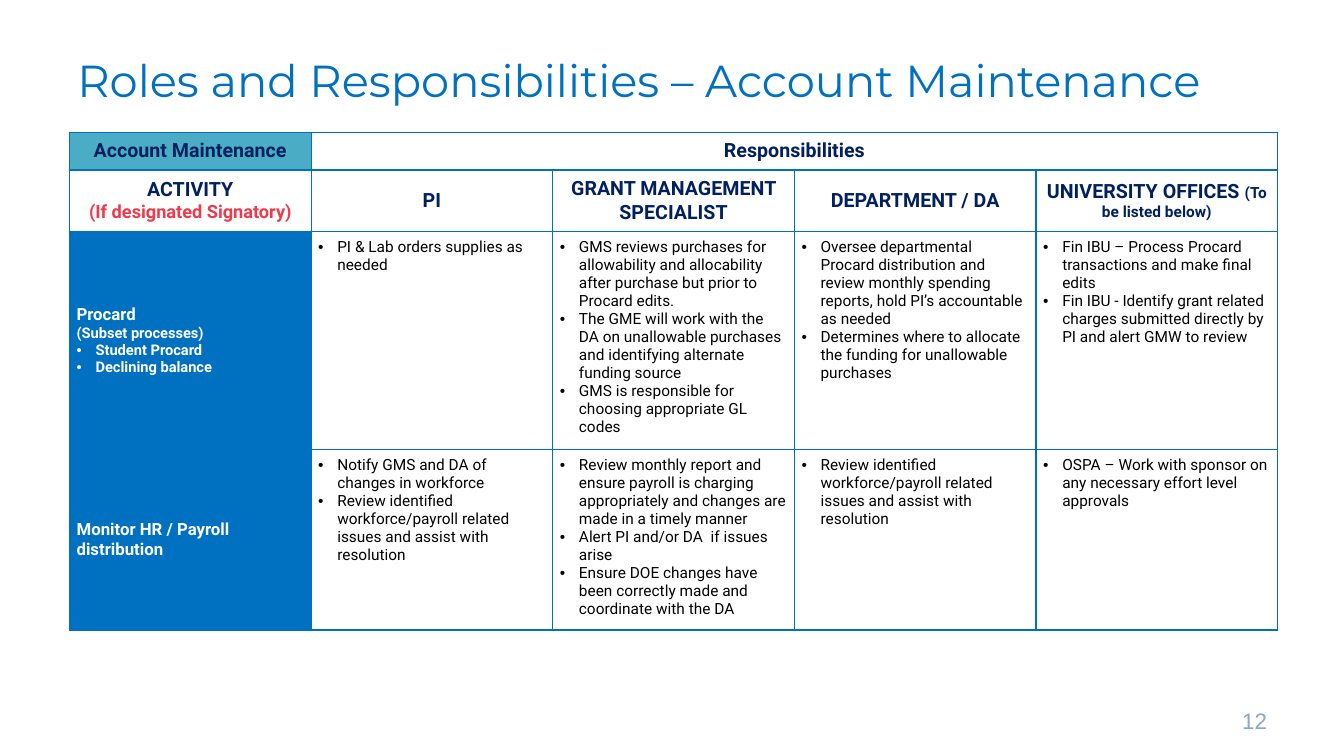
"""Build the slide on roles and responsibilities in account maintenance."""
from dataclasses import dataclass

from lxml.etree import SubElement
from pptx import Presentation
from pptx.dml.color import RGBColor as RGB
from pptx.enum.text import MSO_ANCHOR as Anchor, PP_ALIGN as Align
from pptx.oxml import parse_xml
from pptx.oxml.ns import nsdecls, qn
from pptx.util import Cm, Pt


@dataclass(frozen=True)
class Theme:
    blue: str = "0070C0"
    navy: str = "002060"
    teal: str = "4BACC6"
    red: str = "EF3A4C"
    pale: str = "8CA4D2"
    white: str = "FFFFFF"
    black: str = "000000"
    title_size: float = 32
    number_size: float = 16
    heading_size: float = 14
    signatory_size: float = 13
    activity_size: float = 12
    duty_size: float = 11
    subset_size: float = 10.5


theme = Theme()


def add_text(frame, text, size, color, font="Roboto", bold=False,
             align=Align.LEFT, bullet=False, line=None, same_line=False):
    paragraph = frame.paragraphs[-1]
    if paragraph.runs and not same_line:
        paragraph = frame.add_paragraph()
    paragraph.alignment = align
    if line:
        paragraph.line_spacing = Pt(line)
    if bullet:
        properties = paragraph._p.get_or_add_pPr()
        properties.set("marL", str(Cm(0.48)))
        properties.set("indent", str(-Cm(0.48)))
        SubElement(properties, qn("a:buFont")).set("typeface", "Arial")
        SubElement(properties, qn("a:buChar")).set("char", "•")
    run = paragraph.add_run()
    run.text = text
    run.font.name, run.font.size, run.font.bold = font, Pt(size), bold
    run.font.color.rgb = RGB.from_string(color)


def style_cell(cell, fill=None, anchor=Anchor.MIDDLE, margin=0.18):
    cell.vertical_anchor = anchor
    cell.margin_left = cell.margin_right = Cm(margin)
    cell.margin_top = cell.margin_bottom = Cm(margin)
    if fill:
        cell.fill.solid()
        cell.fill.fore_color.rgb = RGB.from_string(fill)
    else:
        cell.fill.background()
    properties = cell._tc.get_or_add_tcPr()
    for place, side in enumerate(("lnL", "lnR", "lnT", "lnB")):
        properties.insert(place, parse_xml(
            f'<a:{side} {nsdecls("a")} w="{Pt(1)}"><a:solidFill>'
            f'<a:srgbClr val="{theme.blue}"/></a:solidFill></a:{side}>'))


deck = Presentation()
deck.slide_width, deck.slide_height = Cm(33.87), Cm(19.05)
slide = deck.slides.add_slide(deck.slide_layouts[6])

title = slide.shapes.add_textbox(Cm(1.7), Cm(0.89), Cm(33.35), Cm(1.85)).text_frame
title.word_wrap = True
add_text(title, "Roles and Responsibilities – Account Maintenance",
         theme.title_size, theme.blue, font="Montserrat", line=47.2)

page_number = slide.shapes.add_textbox(Cm(24.28), Cm(17.65), Cm(7.9), Cm(1.02)).text_frame
page_number.word_wrap = True
page_number.vertical_anchor = Anchor.MIDDLE
add_text(page_number, "12", theme.number_size, theme.pale, font="Arial", align=Align.RIGHT)

row_heights = [0.9, 1.52, 5.35, 4.45]
column_width = 6.09
roles = slide.shapes.add_table(4, 5, Cm(1.75), Cm(3.33), Cm(5 * column_width),
                               Cm(sum(row_heights))).table
roles.first_row = roles.horz_banding = False
for column in roles.columns:
    column.width = Cm(column_width)
for row, height in zip(roles.rows, row_heights):
    row.height = Cm(height)

heading = {"size": theme.heading_size, "color": theme.navy, "bold": True, "align": Align.CENTER}
roles.cell(0, 1).merge(roles.cell(0, 4))
for column in range(5):
    style_cell(roles.cell(0, column), fill=None if column else theme.teal)
    style_cell(roles.cell(1, column), margin=0.18 if column else 0)
add_text(roles.cell(0, 0).text_frame, "Account Maintenance", **heading)
add_text(roles.cell(0, 1).text_frame, "Responsibilities", **heading)

parties = ["ACTIVITY", "PI", "GRANT MANAGEMENT SPECIALIST", "DEPARTMENT / DA",
           "UNIVERSITY OFFICES "]
for column, party in enumerate(parties):
    add_text(roles.cell(1, column).text_frame, party, **heading)
add_text(roles.cell(1, 0).text_frame, "(If designated Signatory)",
         **heading | {"size": theme.signatory_size, "color": theme.red})
add_text(roles.cell(1, 4).text_frame, "(To be listed below)", same_line=True,
         **heading | {"size": theme.duty_size})

activities = [
    ("Procard", [
        ["PI & Lab orders supplies as needed"],
        ["GMS reviews purchases for allowability and allocability after purchase "
         "but prior to Procard edits.",
         "The GME will work with the DA on unallowable purchases and identifying "
         "alternate funding source",
         "GMS is responsible for choosing appropriate GL codes"],
        ["Oversee departmental Procard distribution and review monthly spending "
         "reports, hold PI’s accountable as needed",
         "Determines where to allocate the funding for unallowable purchases"],
        ["Fin IBU – Process Procard transactions and make final edits",
         "Fin IBU - Identify grant related charges submitted directly by PI and "
         "alert GMW to review"],
    ]),
    ("Monitor HR / Payroll distribution", [
        ["Notify GMS and DA of changes in workforce",
         "Review identified workforce/payroll related issues and assist with resolution"],
        ["Review monthly report and ensure payroll is charging appropriately and "
         "changes are made in a timely manner",
         "Alert PI and/or DA  if issues arise",
         "Ensure DOE changes have been correctly made and coordinate with the DA"],
        ["Review identified workforce/payroll related issues and assist with resolution"],
        ["OSPA – Work with sponsor on any necessary effort level approvals"],
    ]),
]
for row, (activity, duties_by_party) in enumerate(activities, start=2):
    style_cell(roles.cell(row, 0), fill=theme.blue)
    add_text(roles.cell(row, 0).text_frame, activity, theme.activity_size,
             theme.white, bold=True)
    for column, duties in enumerate(duties_by_party, start=1):
        style_cell(roles.cell(row, column), fill=theme.white, anchor=Anchor.TOP)
        for duty in duties:
            add_text(roles.cell(row, column).text_frame, duty, theme.duty_size,
                     theme.black, bullet=True)

subsets = [("(Subset processes)", False), ("Student Procard", True), ("Declining balance", True)]
for subset, bullet in subsets:
    add_text(roles.cell(2, 0).text_frame, subset, theme.subset_size, theme.white,
             bold=True, bullet=bullet)

deck.save("out.pptx")
